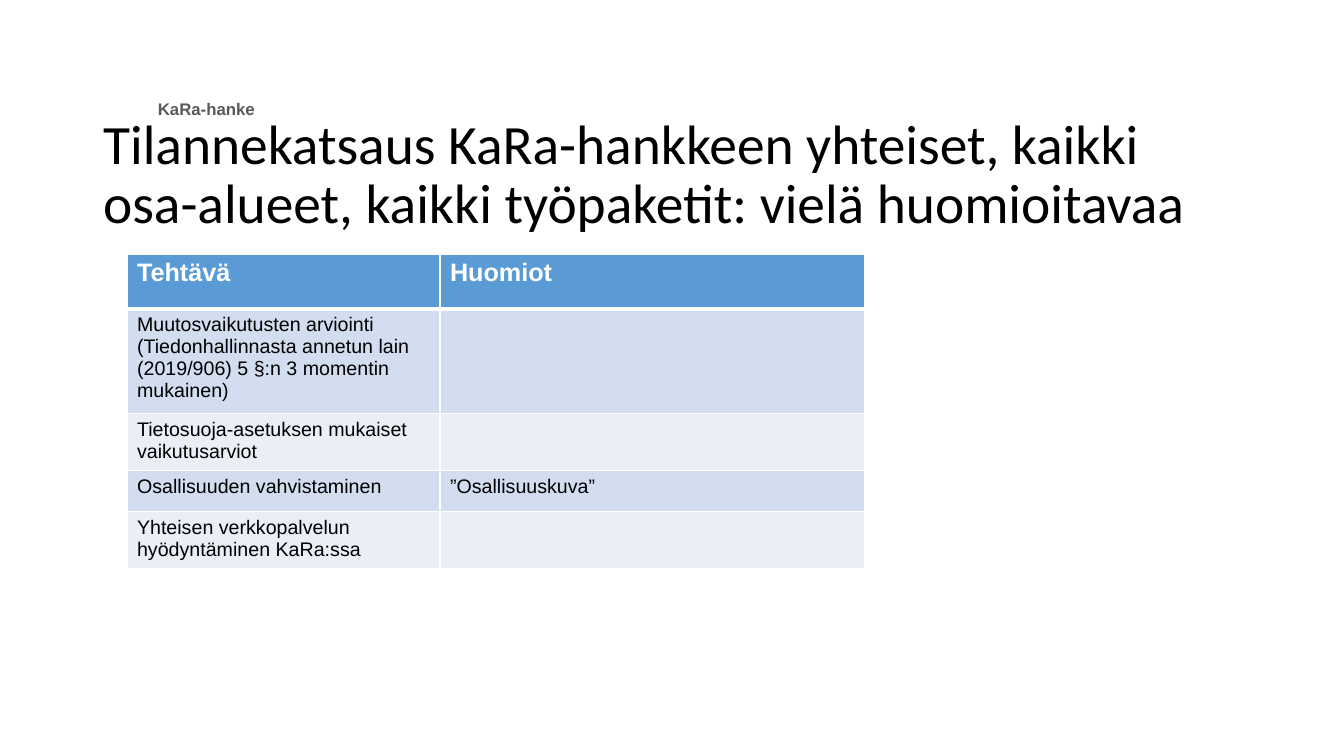
"""Build the KaRa project status slide with its table of remaining tasks."""
from dataclasses import dataclass

from lxml.etree import SubElement
from pptx import Presentation
from pptx.dml.color import RGBColor
from pptx.enum.text import MSO_ANCHOR as Anchor, MSO_AUTO_SIZE as AutoSize, PP_ALIGN as Align
from pptx.oxml.ns import qn
from pptx.util import Emu, Pt

EMU_PER_PX = 914400 / 100.8
WHITE = RGBColor(0xFF, 0xFF, 0xFF)
BLACK = RGBColor(0x00, 0x00, 0x00)
GREY = RGBColor(0x59, 0x59, 0x59)
HEADER_BLUE = RGBColor(0x5B, 0x9B, 0xD5)
BAND_DARK = RGBColor(0xD2, 0xDE, 0xEF)
BAND_LIGHT = RGBColor(0xEA, 0xEF, 0xF7)


@dataclass(frozen=True)
class Style:
    size: float
    color: RGBColor
    bold: bool = False
    font: str = "Arial"


@dataclass(frozen=True)
class Task:
    name: str
    remark: str
    height: int


LABEL_STYLE = Style(12, GREY, True)
TITLE_STYLE = Style(39.6, BLACK, font="Calibri")
HEADER_STYLE = Style(18, WHITE, True)
TASK_STYLE = Style(14, BLACK)
COLUMN_WIDTHS = (313, 425)
TASKS = (
    Task("Tehtävä", "Huomiot", 55),
    Task("Muutosvaikutusten arviointi (Tiedonhallinnasta annetun lain "
         "(2019/906) 5 §:n 3 momentin mukainen)", "", 98),
    Task("Tietosuoja-asetuksen mukaiset vaikutusarviot", "", 54),
    Task("Osallisuuden vahvistaminen", "”Osallisuuskuva”", 41),
    Task("Yhteisen verkkopalvelun hyödyntäminen KaRa:ssa", "", 54),
)


def px(length: int) -> Emu:
    return Emu(round(length * EMU_PER_PX))


def box(left: int, top: int, width: int, height: int) -> tuple[Emu, ...]:
    return px(left), px(top), px(width), px(height)


def add_text(paragraph, text: str, style: Style) -> None:
    run = paragraph.add_run()
    run.text = text
    run.font.size = Pt(style.size)
    run.font.name = style.font
    run.font.bold = style.bold
    run.font.color.rgb = style.color


def add_border(cell, side: str, points: int) -> None:
    line = SubElement(cell._tc.get_or_add_tcPr(), qn(f"a:ln{side}"), w=str(Pt(points)))
    fill = SubElement(line, qn("a:solidFill"))
    SubElement(fill, qn("a:srgbClr"), val=str(WHITE))


def add_label(slide) -> None:
    frame = slide.shapes.add_textbox(*box(148, 94, 141, 30)).text_frame
    frame.word_wrap = True
    add_text(frame.paragraphs[0], "KaRa-hanke", LABEL_STYLE)


def set_title(slide) -> None:
    title = slide.shapes.title
    title.left, title.top, title.width, title.height = box(93, 138, 1159, 76)
    frame = title.text_frame
    frame.word_wrap = True
    frame.auto_size = AutoSize.NONE
    frame.vertical_anchor = Anchor.MIDDLE
    paragraph = frame.paragraphs[0]
    paragraph.alignment = Align.LEFT
    paragraph.line_spacing = 0.9
    add_text(paragraph, "Tilannekatsaus KaRa-hankkeen yhteiset, kaikki osa-alueet, "
             "kaikki työpaketit: vielä huomioitavaa", TITLE_STYLE)


def add_task_table(slide) -> None:
    area = box(127, 254, sum(COLUMN_WIDTHS), sum(task.height for task in TASKS))
    table = slide.shapes.add_table(len(TASKS), len(COLUMN_WIDTHS), *area).table
    for column, width in zip(table.columns, COLUMN_WIDTHS):
        column.width = px(width)
    for index, task in enumerate(TASKS):
        table.rows[index].height = px(task.height)
        band = BAND_DARK if index % 2 else BAND_LIGHT
        for cell, text in zip(table.rows[index].cells, (task.name, task.remark)):
            for side in "LRTB":
                under_header = (index, side) in ((0, "B"), (1, "T"))
                add_border(cell, side, 3 if under_header else 1)
            cell.fill.solid()
            cell.fill.fore_color.rgb = band if index else HEADER_BLUE
            if text:
                add_text(cell.text_frame.paragraphs[0], text,
                         TASK_STYLE if index else HEADER_STYLE)


def main() -> None:
    deck = Presentation()
    deck.slide_width, deck.slide_height = px(1344), px(756)
    slide = deck.slides.add_slide(deck.slide_layouts[5])
    add_label(slide)
    set_title(slide)
    add_task_table(slide)
    deck.save("out.pptx")


if __name__ == "__main__":
    main()
